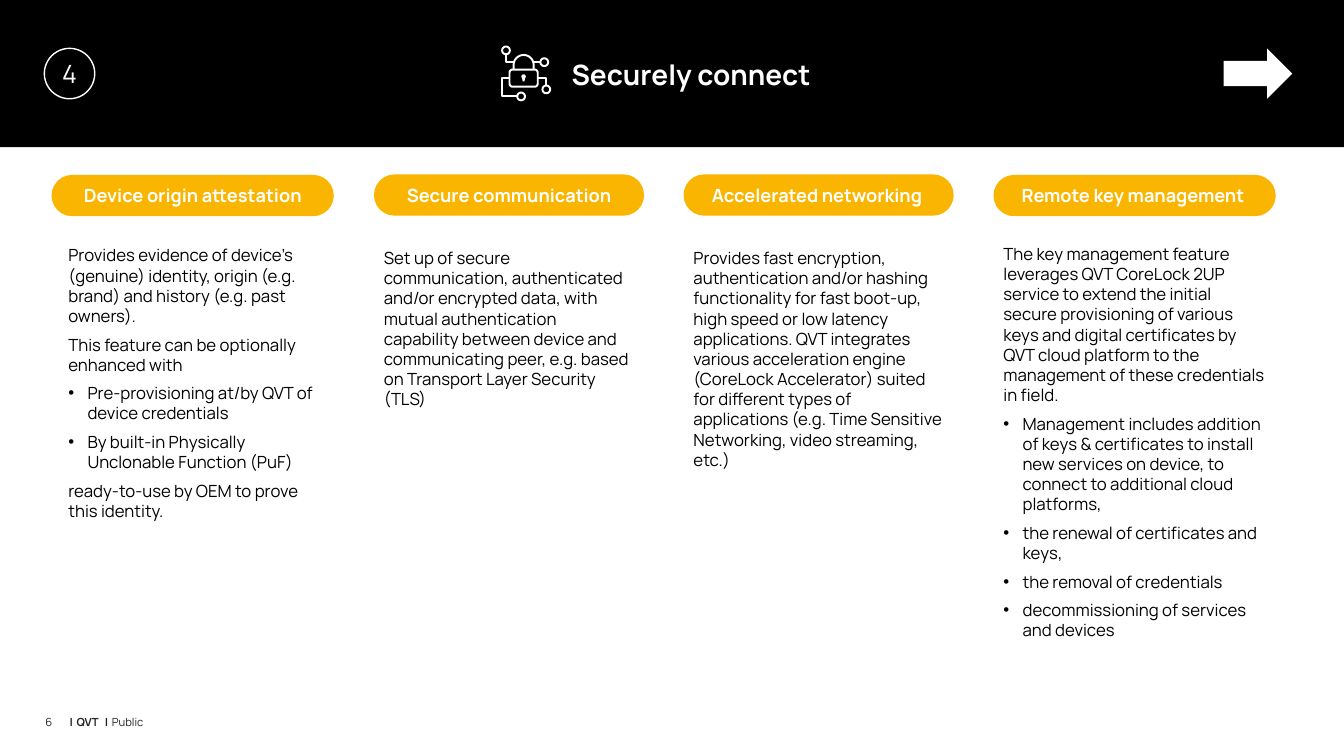
from dataclasses import dataclass
from math import cos, radians, sin
from typing import Optional

from lxml.etree import SubElement
from pptx import Presentation
from pptx.dml.color import RGBColor
from pptx.enum.shapes import MSO_SHAPE
from pptx.enum.text import MSO_ANCHOR, MSO_AUTO_SIZE, PP_ALIGN
from pptx.oxml.ns import qn
from pptx.util import Emu, Inches, Pt

CELL = 76200  # the slide is a grid of 160 columns by 90 rows
COLS, ROWS = 160, 90
FONT = "Manrope"
BLACK, WHITE, GOLD, GREY = "000000", "FFFFFF", "F9B500", "262626"
Dots = list[tuple[float, float]]


@dataclass(frozen=True)
class Box:
    col: float
    row: float
    wide: float
    high: float


@dataclass(frozen=True)
class Para:
    text: str
    bullet: bool = False


@dataclass(frozen=True)
class Topic:
    head: str
    pill: Box
    body: Box
    paras: tuple[Para, ...]


TOPICS = (
    Topic("Device origin attestation", Box(6.14, 20.82, 33.6, 4.92), Box(6.96, 28.6, 32.76, 34.32), (
        Para("Provides evidence of device’s (genuine) identity, origin (e.g. brand) and history (e.g. past owners)."),
        Para("This feature can be optionally enhanced with"),
        Para("Pre-provisioning at/by QVT of device credentials", True),
        Para("By built-in Physically Unclonable Function (PuF)", True),
        Para("ready-to-use by OEM to prove this identity."))),
    Topic("Secure communication", Box(44.52, 20.76, 32.16, 4.92), Box(44.52, 28.92, 32.16, 23.04), (
        Para("Set up of secure communication, authenticated and/or encrypted data, with mutual authentication "
             "capability between device and communicating peer, e.g. based on Transport Layer Security (TLS)"),)),
    Topic("Accelerated networking ", Box(81.38, 20.76, 32.16, 4.92), Box(81.38, 28.92, 32.16, 30.24), (
        Para("Provides fast encryption, authentication and/or hashing functionality for fast boot-up, high speed "
             "or low latency applications. QVT integrates various acceleration engine (CoreLock Accelerator) "
             "suited for different types of applications (e.g. Time Sensitive Networking, video streaming, etc.)"),)),
    Topic("Remote key management ", Box(118.28, 20.82, 33.6, 4.92), Box(118.28, 28.42, 33.6, 51.24), (
        Para("The key management feature leverages QVT CoreLock 2UP service to extend the initial secure "
             "provisioning of various keys and digital certificates by QVT cloud platform to the management "
             "of these credentials in field."),
        Para("Management includes addition of keys & certificates to install new services on device, "
             "to connect to additional cloud platforms,", True),
        Para("the renewal of certificates and keys,", True),
        Para("the removal of credentials", True),
        Para("decommissioning of services and devices", True))),
)

# Padlock icon: ring centres and the bent traces that lead to them
RING = 0.46
NODES = ((60.24, 6), (64.8, 7.4), (65.04, 10.64), (62.04, 11.48))
TRACES = (
    [(60.24, 6.46), (60.24, 7.38), (61.14, 7.38)],
    [(63.6, 7.38), (64.34, 7.38)],
    [(64.02, 9.3), (64.98, 9.3), (64.98, 10.18)],
    [(60.66, 9.3), (59.76, 9.3), (59.76, 11.46), (61.58, 11.46)],
)


def grid(cells: float) -> Emu:
    return Emu(round(cells * CELL))


def place(box: Box) -> tuple[Emu, ...]:
    return grid(box.col), grid(box.row), grid(box.wide), grid(box.high)


def tint(code: str) -> RGBColor:
    return RGBColor.from_string(code)


def paint(shape, fill: Optional[str], line: Optional[str] = None, width: float = 1) -> None:
    shape.shadow.inherit = False
    if fill:
        shape.fill.solid()
        shape.fill.fore_color.rgb = tint(fill)
    else:
        shape.fill.background()
    if line:
        shape.line.color.rgb = tint(line)
        shape.line.width = Pt(width)
    else:
        shape.line.fill.background()


def draw(shapes, kind: MSO_SHAPE, box: Box, fill: Optional[str], line: Optional[str] = None):
    shape = shapes.add_shape(kind, *place(box))
    paint(shape, fill, line)
    return shape


def write(para, text: str, size: float, color: str, bold: bool = False) -> None:
    run = para.add_run()
    run.text = text
    font = run.font
    font.name, font.size, font.bold = FONT, Pt(size), bold
    font.color.rgb = tint(color)


def frame(shape, flush: bool = False):
    """Wrap the text of a shape, without margins if flush."""
    text = shape.text_frame
    text.word_wrap = True
    text.auto_size = MSO_AUTO_SIZE.NONE
    if flush:
        text.margin_left = text.margin_top = text.margin_right = text.margin_bottom = 0
    return text


def label(shape, text: str, size: float, bold: bool = False) -> None:
    body = frame(shape, flush=True)
    body.vertical_anchor = MSO_ANCHOR.MIDDLE
    para = body.paragraphs[0]
    para.alignment = PP_ALIGN.CENTER
    write(para, text, size, WHITE, bold)


def bullet(para) -> None:
    props = para._p.get_or_add_pPr()
    step = Inches(0.19)
    props.set("marL", str(step))
    props.set("indent", str(-step))
    SubElement(props, qn("a:buFont")).set("typeface", "Arial")
    SubElement(props, qn("a:buChar")).set("char", "•")


def add_topic(shapes, topic: Topic) -> None:
    pill = draw(shapes, MSO_SHAPE.ROUNDED_RECTANGLE, topic.pill, GOLD)
    pill.adjustments[0] = 0.5
    label(pill, topic.head, 13, True)
    text = frame(shapes.add_textbox(*place(topic.body)))
    for i, item in enumerate(topic.paras):
        para = text.add_paragraph() if i else text.paragraphs[0]
        if i:
            para.space_before = Pt(6)
        if item.bullet:
            bullet(para)
        write(para, item.text, 12, BLACK)


def arc(x: float, y: float, r: float, start: int, end: int) -> Dots:
    """Points on a circle, clockwise in degrees from the right."""
    return [(x + r * cos(radians(a)), y + r * sin(radians(a))) for a in range(start, end + 1, 15)]


def trace(shapes, curves: list[Dots]):
    """Join several curves in one freeform; a curve that ends at its start is closed."""
    paths = [[(grid(x), grid(y)) for x, y in curve] for curve in curves]
    pen = shapes.build_freeform(*paths[0][0])
    for i, (first, *rest) in enumerate(paths):
        if i:
            pen.move_to(*first)
        pen.add_line_segments(rest, close=first == rest[-1])
    return pen.convert_to_shape()


def add_lock(shapes) -> None:
    parts = shapes.add_group_shape().shapes
    rings = [arc(x, y, RING, 0, 360) for x, y in NODES]
    arch = [(61.14, 8.28), *arc(62.34, 7.74, 1.2, 180, 360), (63.54, 8.28)]
    body = [*arc(61.02, 8.64, 0.36, 180, 270), *arc(63.66, 8.64, 0.36, 270, 360),
            *arc(63.66, 9.96, 0.36, 0, 90), *arc(61.02, 9.96, 0.36, 90, 180), (60.66, 8.64)]
    paint(trace(parts, [*TRACES, *rings, arch, body]), None, WHITE, 1.4)
    hole = [*arc(62.34, 9.12, 0.26, 135, 405), (62.44, 9.7), (62.24, 9.7)]
    paint(trace(parts, [[*hole, hole[0]]]), WHITE)


def add_foot(shapes) -> None:
    mark = frame(shapes.add_textbox(*place(Box(8.28, 84, 53.28, 2.28))), flush=True).paragraphs[0]
    page = frame(shapes.add_textbox(*place(Box(5.4, 84, 2.16, 2.28))), flush=True).paragraphs[0]
    mark.line_spacing = page.line_spacing = Pt(16.8)
    tabs = SubElement(mark._p.get_or_add_pPr(), qn("a:tabLst"))
    for stop in (0.07, 0.35, 0.42):
        tab = SubElement(tabs, qn("a:tab"))
        tab.set("pos", str(Inches(stop)))
        tab.set("algn", "l")
    write(mark, "|\tQVT\t|\t", 8, GREY, True)
    write(mark, "Public", 8, GREY)
    write(page, "6", 8, GREY)


def main() -> None:
    deck = Presentation()
    deck.slide_width, deck.slide_height = grid(COLS), grid(ROWS)
    slide = deck.slides.add_slide(deck.slide_layouts[5])
    shapes = slide.shapes
    add_foot(shapes)
    band = draw(shapes, MSO_SHAPE.RECTANGLE, Box(0, 0, COLS, 17.52), BLACK)
    title = shapes.title
    title.left, title.top, title.width, title.height = place(Box(68.04, 6.84, 33.36, 4.08))
    band._element.addnext(title._element)  # lift the title above the band
    text = frame(title, flush=True)
    text.vertical_anchor = MSO_ANCHOR.TOP
    text.paragraphs[0].alignment = PP_ALIGN.LEFT
    write(text.paragraphs[0], "Securely connect", 20, WHITE, True)
    for topic in TOPICS:
        add_topic(shapes, topic)
    add_lock(shapes)
    label(draw(shapes, MSO_SHAPE.OVAL, Box(5.28, 5.76, 6, 6), None, WHITE), "4", 18)
    draw(shapes, MSO_SHAPE.RIGHT_ARROW, Box(145.68, 5.76, 8.16, 6), WHITE)
    deck.save("out.pptx")


if __name__ == "__main__":
    main()
